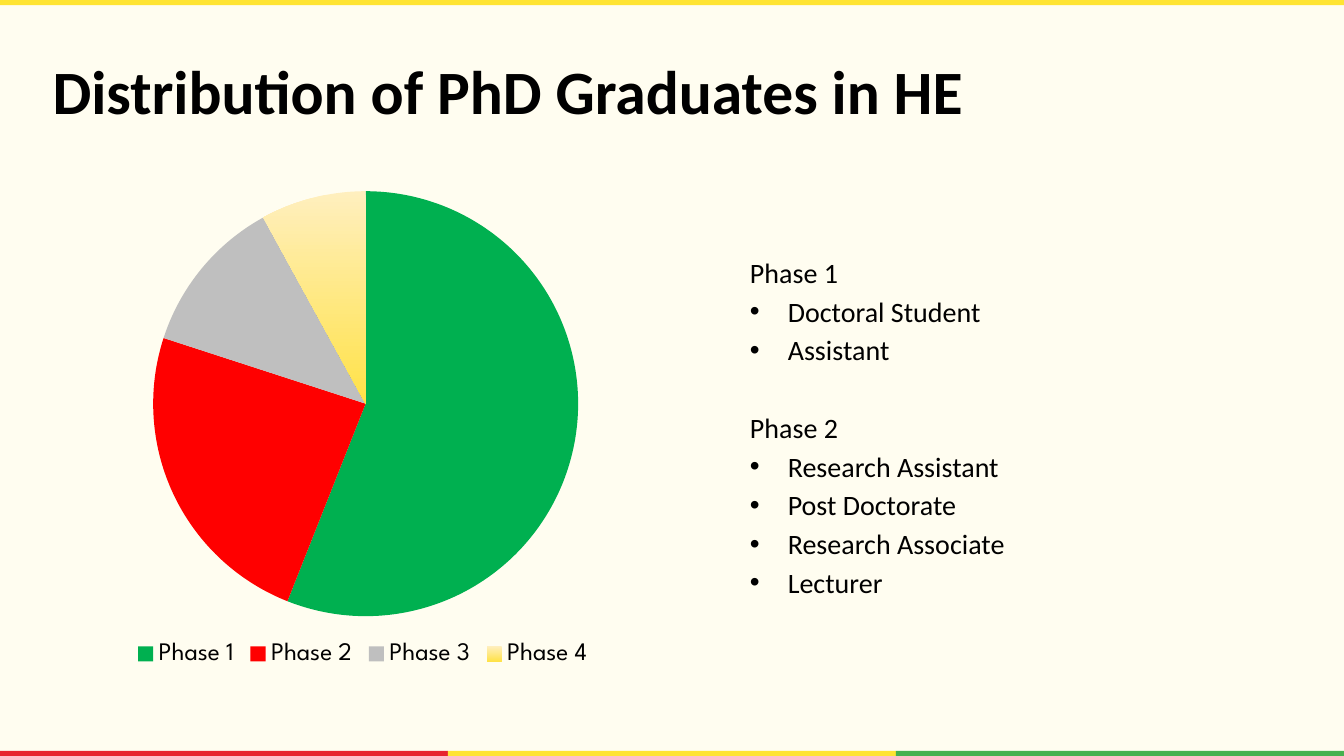
"""Build the slide on the distribution of PhD graduates in higher education."""
import lxml.etree
import pptx
import pptx.chart.data
import pptx.dml.color
import pptx.enum.chart
import pptx.enum.text
import pptx.oxml
import pptx.oxml.ns
import pptx.util

Pt = pptx.util.Pt
qn = pptx.oxml.ns.qn
COLOURS = {
    "cream": "FFFDF0", "text": "000000",
    "red bar": "E7242D", "yellow bar": "FFE433", "green bar": "45B14F",
    "Phase 1": "00B050", "Phase 2": "FF0000", "Phase 3": "BFBFBF",
    "Phase 4": "FFE248", "Phase 4 light": "FFEFBE",
}
SHARES = {"Phase 1": 56, "Phase 2": 24, "Phase 3": 12, "Phase 4": 8}
ROLES = {
    "Phase 1": ["Doctoral Student", "Assistant"],
    "Phase 2": ["Research Assistant", "Post Doctorate", "Research Associate", "Lecturer"],
}
WIDTH, HEIGHT, BAR = 960, 540, 3.6


def colour(name):
    return pptx.dml.color.RGBColor.from_string(COLOURS[name])


def style_font(font, face, size):
    font.name = face
    font.size = Pt(size)
    font.color.rgb = colour("text")


deck = pptx.Presentation()
deck.slide_width, deck.slide_height = Pt(WIDTH), Pt(HEIGHT)
page = deck.slides.add_slide(deck.slide_layouts[1])
page.background.fill.solid()
page.background.fill.fore_color.rgb = colour("cream")

third = WIDTH / 3
bars = [(i * third, HEIGHT - BAR, third, name)
        for i, name in enumerate(["red bar", "yellow bar", "green bar"])]
bars.append((0, 0, WIDTH, "yellow bar"))
for left, top, width, name in bars:
    bar = page.shapes.add_shape(1, Pt(left), Pt(top), Pt(width), Pt(BAR))
    bar.shadow.inherit = False
    bar.fill.solid()
    bar.fill.fore_color.rgb = colour(name)
    bar.line.fill.background()

title = page.shapes.title
body = page.placeholders[1]
for box, left, top, width, height in [(title, 37.5, 37.5, 884, 53.5),
                                      (body, 535.7, 126, 424, 408)]:
    box.left, box.top, box.width, box.height = Pt(left), Pt(top), Pt(width), Pt(height)
    frame = box.text_frame
    frame.margin_left = frame.margin_right = frame.margin_top = frame.margin_bottom = 0
    frame.word_wrap = True
    frame.auto_size = pptx.enum.text.MSO_AUTO_SIZE.NONE

title.text_frame.text = "Distribution of PhD Graduates in HE"
title.text_frame.vertical_anchor = pptx.enum.text.MSO_ANCHOR.MIDDLE
para = title.text_frame.paragraphs[0]
para.alignment = pptx.enum.text.PP_ALIGN.LEFT
style_font(para.runs[0].font, "Calibri", 44)
para.runs[0].font.bold = True

body.text_frame.margin_top = Pt(56.5)
body.text_frame.vertical_anchor = pptx.enum.text.MSO_ANCHOR.TOP
lines = [(text, text in ROLES) for phase in ROLES for text in [phase] + ROLES[phase]]
for i, (text, heading) in enumerate(lines):
    para = body.text_frame.paragraphs[0] if i == 0 else body.text_frame.add_paragraph()
    para.text = text
    para.space_before = Pt(0 if i == 0 else 31.6 if heading else 3.6)
    props = para._p.get_or_add_pPr()
    indent = 0 if heading else Pt(27)
    props.set("marL", str(indent))
    props.set("indent", str(-indent))
    if heading:
        lxml.etree.SubElement(props, qn("a:buNone"))
    else:
        lxml.etree.SubElement(props, qn("a:buFont")).set("typeface", "Arial")
        lxml.etree.SubElement(props, qn("a:buChar")).set("char", "•")
    style_font(para.runs[0].font, "Calibri", 20)

chart_data = pptx.chart.data.CategoryChartData()
chart_data.categories = list(SHARES)
chart_data.add_series("Series 1", list(SHARES.values()))
chart = page.shapes.add_chart(pptx.enum.chart.XL_CHART_TYPE.PIE, Pt(37.5), Pt(126),
                              Pt(443), Pt(353), chart_data).chart
style_font(chart.font, "League Spartan", 18)
chart.has_title = False
chart.has_legend = True
chart.legend.position = pptx.enum.chart.XL_LEGEND_POSITION.BOTTOM
chart.legend.include_in_layout = False
pie = chart.plots[0]
pie.vary_by_categories = True
for i, phase in enumerate(SHARES):
    slice_format = pie.series[0].points[i].format
    slice_format.line.fill.background()
    if phase == "Phase 4":
        slice_format.fill.gradient()
        slice_format.fill.gradient_angle = 270
        for stop, name in zip(slice_format.fill.gradient_stops, ["Phase 4 light", "Phase 4"]):
            stop.color.rgb = colour(name)
    else:
        slice_format.fill.solid()
        slice_format.fill.fore_color.rgb = colour(phase)

plot_area = chart._chartSpace.chart.plotArea
for old_layout in plot_area.findall(qn("c:layout")):
    plot_area.remove(old_layout)
layout = lxml.etree.Element(qn("c:layout"))
manual = lxml.etree.SubElement(layout, qn("c:manualLayout"))
for tag, value in [("layoutTarget", "inner"), ("xMode", "edge"), ("yMode", "edge"),
                   ("x", 0.16), ("y", 0.03), ("w", 0.69), ("h", 0.86)]:
    lxml.etree.SubElement(manual, qn("c:" + tag)).set("val", str(value))
plot_area.insert(0, layout)

deck.save("out.pptx")
